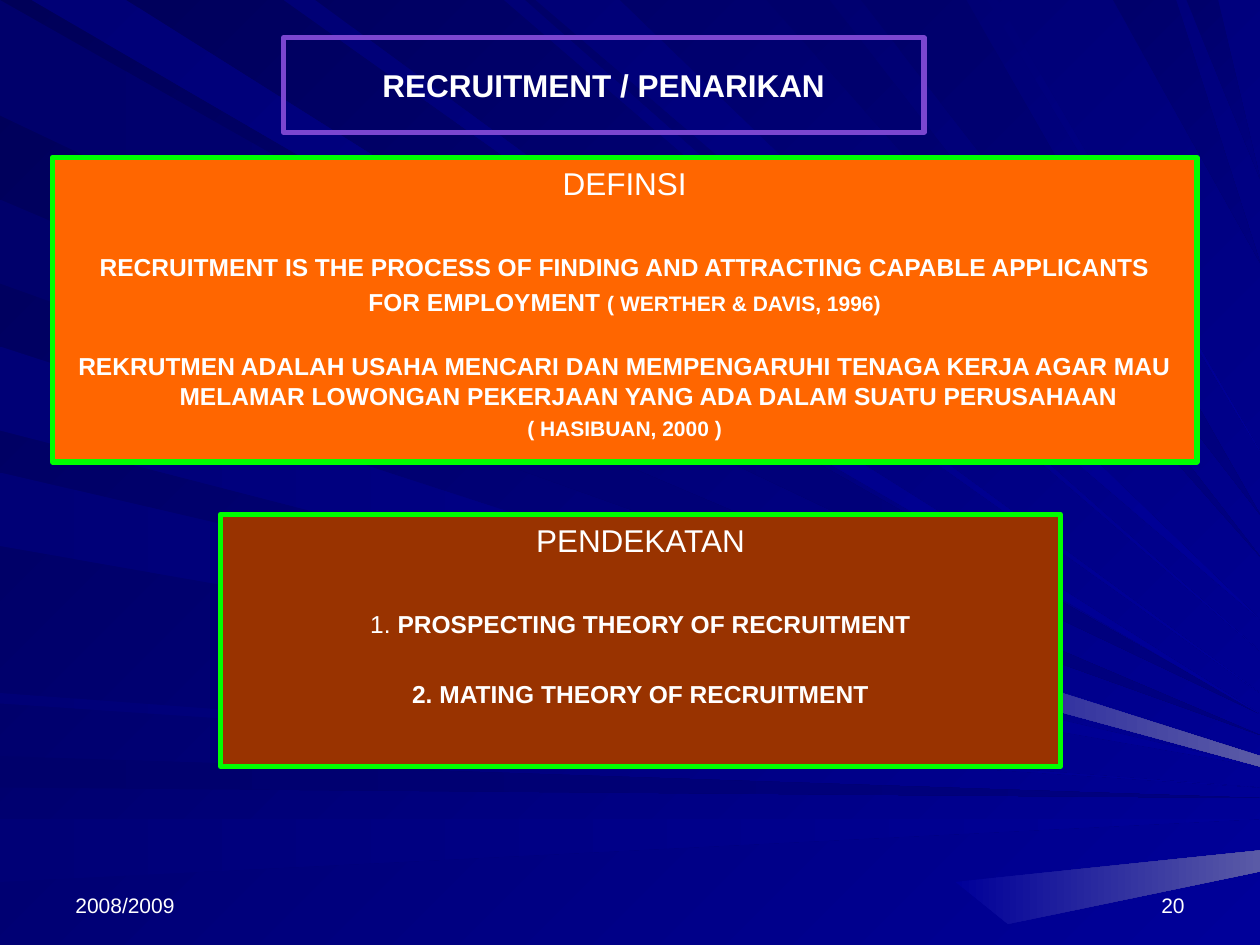
from pptx import Presentation, util as u
from pptx.dml.color import RGBColor
from pptx.enum import shapes as kinds, text as t

COLUMN = ROW = u.Inches(10) // 120  # the slide is 120 columns by 90 rows

COLORS = {
    "white": "FFFFFF", "title line": "7B46D0", "panel line": "00FF00",
    "definition": "FF6600", "approach": "993300",
    "night": "000058", "blue": "000099",
    "shade": "00006B", "dusk": "000080", "deep": "000076", "glint": "5A5AA6",
}
DIM, BRIGHT, GLINT = ("shade", "dusk"), ("deep", "blue"), ("blue", "glint")

# Start and end on the slide's edge, row where the ray meets the right edge
TOP_RAYS = [
    (3, 12, 68, BRIGHT), (27, 30, 66, BRIGHT), (48, 50, 62, BRIGHT),
    (51, 59, 59, BRIGHT), (73, 79, 53, DIM), (82, 92, 49, DIM),
    (94, 95, 43, BRIGHT), (106, 112, 25, DIM), (113, 116, 17, DIM),
]
LEFT_RAYS = [
    (0, 11, 68, DIM), (19, 27, 70, DIM), (33, 41, 72, BRIGHT),
    (45, 52, 73, BRIGHT), (66, 67, 75, BRIGHT), (72, 75, 76, DIM),
    (78, 84, 78, BRIGHT),
]
GLINTS = [
    [(76, 58), (76, 61), (120, 73), (120, 72)],
    [(91, 84), (96, 88), (120, 83), (120, 81)],
]

SIZES = {"heading": 18, "statement": 14, "source": 12}

# Each paragraph: space before in points, then runs of (words, role, bold)
DEFINITION = [
    (2, [("DEFINSI", "heading", False)]),
    (29, [("RECRUITMENT IS THE PROCESS OF FINDING AND ATTRACTING CAPABLE APPLICANTS",
           "statement", True)]),
    (3, [("FOR EMPLOYMENT ", "statement", True),
         ("( WERTHER & DAVIS, 1996)", "source", True)]),
    (20, [("REKRUTMEN ADALAH USAHA MENCARI DAN MEMPENGARUHI TENAGA KERJA AGAR MAU "
           "MELAMAR LOWONGAN PEKERJAAN YANG ADA DALAM SUATU PERUSAHAAN",
           "statement", True)]),
    (3, [("( HASIBUAN, 2000 )", "source", True)]),
]
APPROACH = [
    (2, [("PENDEKATAN", "heading", False)]),
    (29, [("1. ", "statement", False),
          ("PROSPECTING THEORY OF RECRUITMENT", "statement", True)]),
    (23, [("2. MATING THEORY OF RECRUITMENT", "statement", True)]),
]


def rgb(name):
    return RGBColor.from_string(COLORS[name])


def grid(column, row, columns, rows):
    """Left, top, width and height of a box on the slide's grid."""
    return [round(n) for n in (column * COLUMN, row * ROW, columns * COLUMN, rows * ROW)]


def blend(fill, ramp, angle):
    """Fill along a ramp of two colours, at an angle measured clockwise."""
    fill.gradient()
    fill.gradient_angle = -angle % 360
    for stop, color in zip(fill.gradient_stops, ramp):
        stop.color.rgb = rgb(color)


def outline(shape, color):
    shape.line.color.rgb = rgb(color)
    shape.line.width = u.Pt(3)


def set_font(paragraph, role, bold=False):
    font = paragraph.font
    font.name, font.size, font.bold = "Arial", u.Pt(SIZES[role]), bold
    font.color.rgb = rgb("white")


def draw_ray(slide, corners, ramp, angle):
    builder = slide.shapes.build_freeform(*corners[0], scale=COLUMN)
    builder.add_line_segments(corners[1:], close=True)
    ray = builder.convert_to_shape()
    ray.shadow.inherit = False
    ray.line.fill.background()
    blend(ray.fill, ramp, angle)


def draw_backdrop(slide):
    blend(slide.background.fill, ("night", "blue"), 45)
    for start, end, row, ramp in LEFT_RAYS:
        draw_ray(slide, [(0, start), (0, end), (120, row)], ramp, 0)
    for start, end, row, ramp in TOP_RAYS:
        draw_ray(slide, [(start, 0), (end, 0), (120, row)], ramp, 45)
    for corners in GLINTS:
        draw_ray(slide, corners, GLINT, 0)


def place_title(slide, box, words):
    title = slide.shapes.title
    slide.shapes._spTree.append(title._element)  # in front of the rays
    title.left, title.top, title.width, title.height = box
    outline(title, "title line")
    frame = title.text_frame
    frame.text = words
    frame.auto_size = t.MSO_AUTO_SIZE.NONE
    frame.vertical_anchor = t.MSO_ANCHOR.MIDDLE
    heading = frame.paragraphs[0]
    heading.alignment = t.PP_ALIGN.CENTER
    set_font(heading, "heading", True)


def add_panel(slide, box, color, paragraphs):
    panel = slide.shapes.add_shape(kinds.MSO_SHAPE.RECTANGLE, *box)
    panel.shadow.inherit = False
    panel.fill.solid()
    panel.fill.fore_color.rgb = rgb(color)
    outline(panel, "panel line")
    frame = panel.text_frame
    frame.word_wrap = True
    frame.vertical_anchor = t.MSO_ANCHOR.TOP
    hanging = u.Inches(0.38)
    for index, (gap, runs) in enumerate(paragraphs):
        paragraph = frame.add_paragraph() if index else frame.paragraphs[0]
        paragraph.alignment = t.PP_ALIGN.CENTER
        paragraph.space_before = u.Pt(gap)
        properties = paragraph._p.get_or_add_pPr()
        properties.set("marL", str(hanging))
        properties.set("indent", str(-hanging))
        _, main_role, main_bold = runs[0]
        set_font(paragraph, main_role, main_bold)
        for words, role, bold in runs:
            run = paragraph.add_run()
            run.text = words
            if role != main_role:
                run.font.size = u.Pt(SIZES[role])
            if bold != main_bold:
                run.font.bold = bold


def add_footer(slide, box, words, alignment):
    frame = slide.shapes.add_textbox(*box).text_frame
    frame.word_wrap = True
    frame.vertical_anchor = t.MSO_ANCHOR.BOTTOM
    frame.text = words
    frame.paragraphs[0].alignment = alignment
    set_font(frame.paragraphs[0], "source")


def main():
    deck = Presentation()
    deck.slide_width, deck.slide_height = 120 * COLUMN, 90 * ROW
    slide = deck.slides.add_slide(deck.slide_layouts[5])
    draw_backdrop(slide)
    add_footer(slide, grid(6, 82, 28, 6), "2008/2009", t.PP_ALIGN.LEFT)
    add_footer(slide, grid(86, 82, 28, 6), "20", t.PP_ALIGN.RIGHT)
    place_title(slide, grid(27, 3.6, 61, 9), "RECRUITMENT / PENARIKAN")
    add_panel(slide, grid(5, 15, 109, 29), "definition", DEFINITION)
    add_panel(slide, grid(21, 49, 80, 24), "approach", APPROACH)
    deck.save("out.pptx")


if __name__ == "__main__":
    main()
